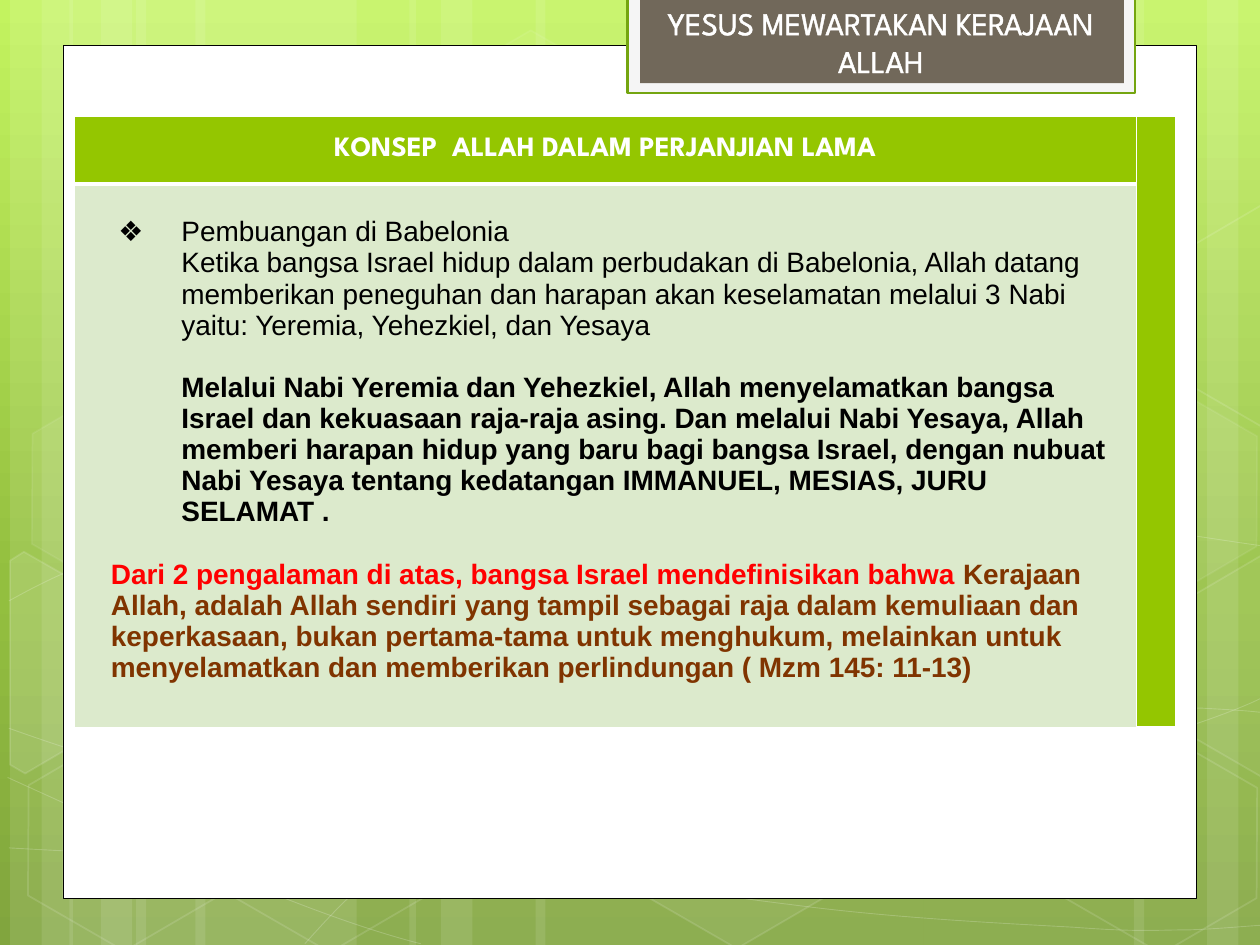
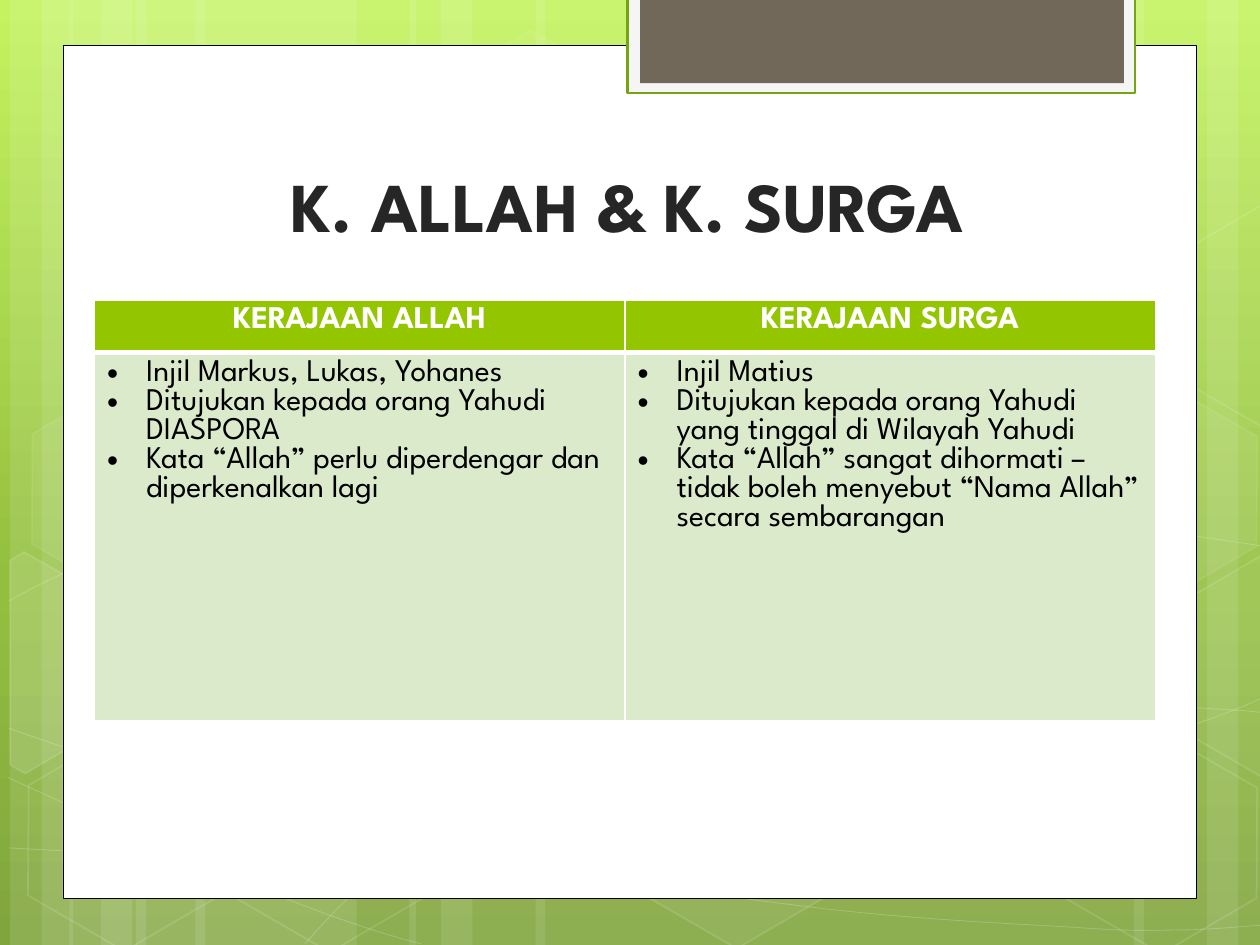
from copy import deepcopy

from lxml.etree import SubElement
from pptx import Presentation
from pptx.dml.color import RGBColor
from pptx.enum.shapes import MSO_SHAPE
from pptx.enum.text import MSO_ANCHOR, MSO_AUTO_SIZE, PP_ALIGN
from pptx.oxml.ns import qn
from pptx.util import Inches, Pt

WHITE = RGBColor(0xFF, 0xFF, 0xFF)
BLACK = RGBColor(0x00, 0x00, 0x00)
DARK = RGBColor(0x26, 0x26, 0x26)
GREEN = RGBColor(0x94, 0xC6, 0x00)
PALE_GREEN = RGBColor(0xDC, 0xEA, 0xCC)
TAB_EDGE = RGBColor(0x74, 0xA5, 0x10)
TAB_RIM = RGBColor(0xF5, 0xF5, 0xF5)
TAUPE = RGBColor(0x71, 0x68, 0x5A)
RED = RGBColor(0xFF, 0x00, 0x00)
BROWN = RGBColor(0x80, 0x34, 0x00)
BACKDROP = [(0, RGBColor(0xC3, 0xF3, 0x5F)), (0.62, RGBColor(0x93, 0xBF, 0x3F)),
            (1, RGBColor(0x81, 0xA5, 0x3E))]
HEADING, BODY = "League Spartan", "Arial"
WIDTH, HEIGHT = 10, 7.5

# Background stripes: left edge and width
STRIPES = [(1.08, 1.75), (0.08, 0.5), (0.33, 0.83), (1.55, 1.75), (0.55, 0.5), (0.8, 0.83),
           (7.33, 1.75), (9.58, 0.5), (9, 0.83), (4.25, 3.08), (3.25, 0.5), (3.5, 0.83)]

# Background curves: start point, then Bezier segments (or a plain end point)
CURVES = [
    ((0.07, 6.73), [(0.61, 6.76, 1.15, 6.79, 1.9, 6.78), (2.65, 6.77, 3.58, 6.75, 4.58, 6.65),
                    (5.58, 6.55, 7, 6.36, 7.92, 6.17), (8.83, 5.98, 9.77, 5.68, 10.07, 5.51)]),
    ((0.07, 4.77), [(0.36, 4.61, 0.65, 4.46, 1.21, 4.31), (1.78, 4.16, 2.59, 3.94, 3.47, 3.87),
                    (4.36, 3.8, 5.44, 3.79, 6.54, 3.87), (7.64, 3.95, 9.47, 4.26, 10.07, 4.34)]),
    ((0.06, 6.17), [(1.27, 6.72, 2.47, 7.27, 3.34, 7.49)]),
    ((0.07, 5.78), [(0.38, 5.89, 0.7, 6, 1.28, 6.16), (1.86, 6.31, 2.73, 6.56, 3.57, 6.73),
                    (4.4, 6.9, 5.45, 7.08, 6.28, 7.18), (7.11, 7.29, 8, 7.33, 8.53, 7.36),
                    (9.05, 7.4, 9.19, 7.38, 9.45, 7.38), (9.71, 7.37, 9.89, 7.35, 10.07, 7.34)]),
    ((2.42, 7.49), [(2.6, 7.29, 2.78, 7.09, 3.02, 6.91), (3.26, 6.73, 3.6, 6.53, 3.88, 6.39),
                    (4.16, 6.25, 4.33, 6.19, 4.7, 6.09), (5.06, 5.99, 5.73, 5.85, 6.08, 5.78),
                    (6.44, 5.71, 6.49, 5.71, 6.8, 5.69), (7.11, 5.66, 7.6, 5.63, 7.94, 5.62),
                    (8.29, 5.61, 8.86, 5.62, 8.86, 5.62), (9.53, 5.62),
                    (9.71, 5.63, 9.88, 5.64, 9.97, 5.65), (10.06, 5.66, 10.03, 5.65, 10.06, 5.66)]),
]

# Whole hexagons: left, top, fill opacity, line opacity (percent)
HEXAGONS = [(3.34, 0.36, 4, 8), (4.97, 5.89, 6, 12), (0.11, 5.91, 0, 12), (0.14, 3.12, 7, 8),
            (1.74, 5.92, 0, 12), (8.34, 5.93, 0, 12), (8.34, 3.14, 7, 8)]

# Hexagons cut by the slide edge: corners, fill opacity
CUT_HEXAGONS = [
    ([(0.08, 4.45), (0.19, 4.38), (0.96, 4.82), (0.95, 5.7), (0.2, 6.14), (0.08, 6.07)], 10),
    ([(9.26, 4.85), (10.01, 4.41), (10.09, 4.46), (10.09, 6.13), (10.02, 6.17), (9.26, 5.73)], 4),
    ([(9.26, 2.07), (10.01, 1.63), (10.1, 1.68), (10.09, 3.35), (10.02, 3.39), (9.26, 2.95)], 0),
]


def box(*lengths):
    return [Inches(v) for v in lengths]


def set_opacity(fill_parent, percent):
    color = fill_parent.find(qn("a:solidFill")).find(qn("a:srgbClr"))
    SubElement(color, qn("a:alpha"), val=str(percent * 1000))


def paint(shape, fill=None, opacity=100, line=None, width=1, line_opacity=100):
    shape.shadow.inherit = False
    if fill is None or opacity == 0:
        shape.fill.background()
    else:
        shape.fill.solid()
        shape.fill.fore_color.rgb = fill
        if opacity < 100:
            set_opacity(shape._element.spPr, opacity)
    if line is None:
        shape.line.fill.background()
    else:
        shape.line.color.rgb = line
        shape.line.width = Pt(width)
        if line_opacity < 100:
            set_opacity(shape._element.spPr.find(qn("a:ln")), line_opacity)


def add_rect(shapes, lengths, **look):
    paint(shapes.add_shape(MSO_SHAPE.RECTANGLE, *box(*lengths)), **look)


def add_outline(shapes, points, close, **look):
    start, *rest = [tuple(box(*point)) for point in points]
    builder = shapes.build_freeform(*start)
    builder.add_line_segments(rest, close=close)
    shape = builder.convert_to_shape()
    paint(shape, **look)
    return shape


def add_curve(shapes, start, segments, **look):
    """Join the segment ends by lines, then bend each line with its control points."""
    shape = add_outline(shapes, [start] + [seg[-2:] for seg in segments], False, **look)
    lines = list(shape._element.iter(qn("a:lnTo")))
    for line, segment in zip(lines, segments):
        if len(segment) == 2:
            continue
        bend = line.makeelement(qn("a:cubicBezTo"), {})
        for x, y in zip(segment[::2], segment[1::2]):
            SubElement(bend, qn("a:pt"), x=str(Inches(x) - shape.left),
                       y=str(Inches(y) - shape.top))
        line.getparent().replace(line, bend)


def set_backdrop(master):
    fill = master.background.fill
    fill.gradient()
    fill.gradient_angle = 270
    stops = master._element.find(".//" + qn("a:gsLst"))
    stops.append(deepcopy(stops[-1]))
    for stop, (position, color) in zip(fill.gradient_stops, BACKDROP):
        stop.position = position
        stop.color.rgb = color


def decorate_master(master, s):
    """Draw the shared decoration as one group and hand it to the master."""
    group = s.shapes.add_group_shape()
    shapes = group.shapes
    for left, width in STRIPES:
        add_rect(shapes, (left, 0, width, HEIGHT), fill=WHITE, opacity=10)
    for start, segments in CURVES:
        add_curve(shapes, start, segments, line=WHITE, width=0.5, line_opacity=20)
    for left, top, opacity, line_opacity in HEXAGONS:
        hexagon = shapes.add_shape(MSO_SHAPE.HEXAGON, *box(left, top, 1.75, 1.52))
        hexagon.adjustments[0] = 0.285
        hexagon.rotation = 30
        paint(hexagon, WHITE, opacity, WHITE, line_opacity=line_opacity)
    for corners, opacity in CUT_HEXAGONS:
        add_outline(shapes, corners, True, fill=WHITE, opacity=opacity,
                    line=WHITE, line_opacity=12)
    # White panel and the tab hanging from the top edge
    add_rect(shapes, (0.5, 0.36, 9, 6.77), fill=WHITE, line=BLACK, width=0.5)
    add_rect(shapes, (4.98, -0.02, 4.03, 0.76), fill=TAB_RIM, line=TAB_EDGE, width=1.25)
    add_rect(shapes, (5.08, -0.02, 3.84, 0.68), fill=TAUPE)
    master.shapes._spTree.insert(2, group._element)
    for number, props in enumerate(master._element.iter(qn("p:cNvPr")), 1):
        props.set("id", str(number))


def add_run(p, text, size=16, font=HEADING, color=BLACK, bold=False):
    r = p.add_run()
    r.text = text
    r.font.size = Pt(size)
    r.font.name = font
    r.font.color.rgb = color
    r.font.bold = bold
    return r


def set_title(s, text, lengths, outline, **look):
    title = s.shapes.title
    title.left, title.top, title.width, title.height = box(*lengths)
    tf = title.text_frame
    tf.auto_size = MSO_AUTO_SIZE.NONE
    tf.vertical_anchor = MSO_ANCHOR.BOTTOM
    p = tf.paragraphs[0]
    p.alignment = PP_ALIGN.CENTER
    rPr = add_run(p, text, **look)._r.get_or_add_rPr()
    ln = rPr.makeelement(qn("a:ln"), {"w": str(Pt(outline))})
    SubElement(SubElement(ln, qn("a:solidFill")), qn("a:srgbClr"), val=str(WHITE))
    rPr.insert(0, ln)


def indent(p, left, first=0, bullet=None):
    pPr = p._p.get_or_add_pPr()
    pPr.set("marL", str(Inches(left)))
    pPr.set("indent", str(Inches(first)))
    if bullet:
        SubElement(pPr, qn("a:buFont"), typeface=BODY)
        SubElement(pPr, qn("a:buChar"), char=bullet)


def next_paragraph(tf):
    p = tf.paragraphs[-1]
    return tf.add_paragraph() if p.runs else p


def style_cell(cell, fill, bottom=1):
    cell.fill.solid()
    cell.fill.fore_color.rgb = fill
    tcPr = cell._tc.get_or_add_tcPr()
    for i, side in enumerate("LRTB"):
        width = bottom if side == "B" else 1
        ln = tcPr.makeelement(qn("a:ln" + side), {"w": str(Pt(width))})
        SubElement(SubElement(ln, qn("a:solidFill")), qn("a:srgbClr"), val=str(WHITE))
        tcPr.insert(i, ln)


def add_grid(s, left, top, columns, rows):
    """Add a table with a green header row and pale body rows."""
    frame = s.shapes.add_table(len(rows), len(columns),
                               *box(left, top, sum(columns), sum(rows)))
    table = frame.table
    table.horz_banding = False
    for column, width in zip(table.columns, columns):
        column.width = Inches(width)
    for i, (row, height) in enumerate(zip(table.rows, rows)):
        row.height = Inches(height)
        for cell in row.cells:
            style_cell(cell, PALE_GREEN if i else GREEN, 1 if i else 3)
    return table


def fill_header(cell, text, size):
    p = cell.text_frame.paragraphs[0]
    p.alignment = PP_ALIGN.CENTER
    add_run(p, text, size=size, color=WHITE, bold=True)


def build_exile_slide(s):
    set_title(s, "YESUS MEWARTAKAN KERAJAAN ALLAH", (5.16, 0.02, 3.66, 0.66), 1.45,
              size=18, color=WHITE)
    table = add_grid(s, 0.59, 0.92, [8.43, 0.31], [0.54, 4.32])
    table.cell(0, 1).merge(table.cell(1, 1))
    header, body = table.cell(0, 0), table.cell(1, 0)
    header.vertical_anchor = MSO_ANCHOR.MIDDLE
    fill_header(header, "KONSEP  ALLAH DALAM PERJANJIAN LAMA", 16)
    body.margin_top = Inches(0.26)
    # Indent, space before, runs with colour and weight
    paragraphs = [
        ((0.75, -0.5, "❖"), 0, [("Pembuangan di Babelonia", BLACK, False)]),
        ((0.75,), 0, [("Ketika bangsa Israel hidup dalam perbudakan di Babelonia, Allah datang "
                       "memberikan peneguhan dan harapan akan keselamatan melalui 3 Nabi yaitu: "
                       "Yeremia, Yehezkiel, dan Yesaya", BLACK, False)]),
        ((0.75,), 17.8, [("Melalui Nabi Yeremia dan Yehezkiel, Allah menyelamatkan bangsa Israel "
                          "dan kekuasaan raja-raja asing. Dan melalui Nabi Yesaya, Allah memberi "
                          "harapan hidup yang baru bagi bangsa Israel, dengan nubuat Nabi Yesaya "
                          "tentang kedatangan IMMANUEL, MESIAS, JURU SELAMAT .", BLACK, True)]),
        ((0.19,), 17.8, [("Dari 2 pengalaman di atas, bangsa Israel mendefinisikan bahwa ",
                          RED, True),
                         ("Kerajaan Allah, adalah Allah sendiri yang tampil sebagai raja dalam "
                          "kemuliaan dan keperkasaan, bukan pertama-tama untuk menghukum, "
                          "melainkan untuk menyelamatkan dan memberikan perlindungan "
                          "( Mzm 145: 11-13)", BROWN, True)]),
    ]
    for indents, space, runs in paragraphs:
        p = next_paragraph(body.text_frame)
        p.space_before = Pt(space)
        indent(p, *indents)
        for text, color, bold in runs:
            add_run(p, text, font=BODY, color=color, bold=bold)


def build_comparison_slide(s):
    set_title(s, "K. ALLAH & K. SURGA", (1.14, 1.22, 7.68, 0.79), 1.06,
              size=40, color=DARK, bold=True)
    kingdoms = {
        "KERAJAAN ALLAH": ["Injil Markus, Lukas, Yohanes",
                           "Ditujukan kepada orang Yahudi DIASPORA",
                           "Kata “Allah” perlu diperdengar dan diperkenalkan lagi"],
        "KERAJAAN SURGA": ["Injil Matius",
                           "Ditujukan kepada orang Yahudi yang tinggal di Wilayah Yahudi",
                           "Kata “Allah” sangat dihormati – tidak boleh menyebut “Nama Allah” "
                           "secara sembarangan"],
    }
    table = add_grid(s, 0.75, 2.38, [4.21] * 2, [0.42, 2.92])
    for column, (name, points) in enumerate(kingdoms.items()):
        fill_header(table.cell(0, column), name, 18)
        for point in points:
            p = next_paragraph(table.cell(1, column).text_frame)
            indent(p, 0.31, -0.31, "•")
            add_run(p, point, size=18)


def main():
    prs = Presentation()
    prs.slide_width, prs.slide_height = box(WIDTH, HEIGHT)
    title_only = prs.slide_layouts[5]
    exile, comparison = [prs.slides.add_slide(title_only) for _ in range(2)]
    set_backdrop(prs.slide_master)
    decorate_master(prs.slide_master, exile)
    build_exile_slide(exile)
    build_comparison_slide(comparison)
    prs.save("out.pptx")


if __name__ == "__main__":
    main()
